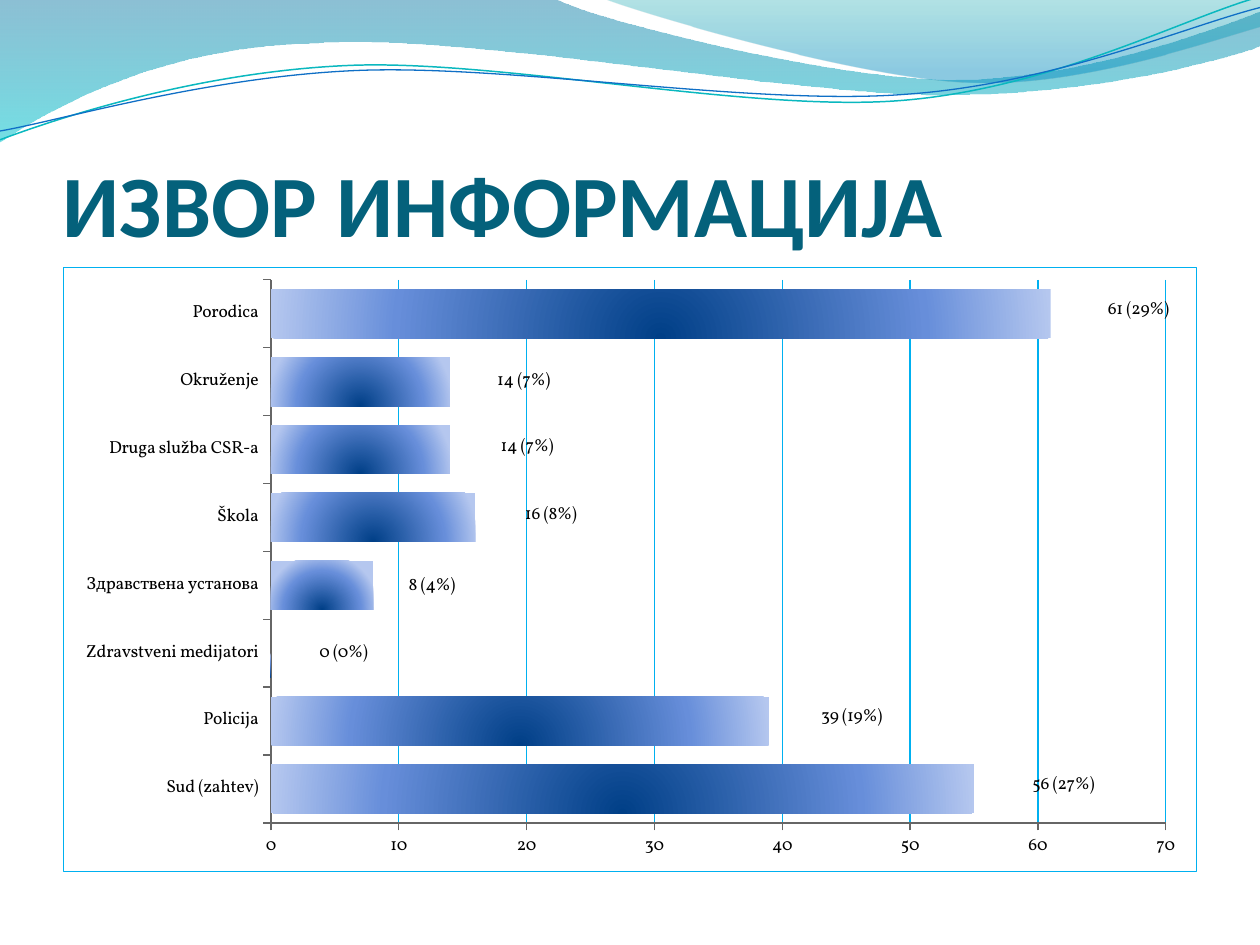
from pptx import Presentation
from pptx.chart.data import CategoryChartData
from pptx.dml.color import RGBColor
from pptx.enum.chart import XL_CHART_TYPE, XL_LABEL_POSITION, XL_TICK_MARK
from pptx.enum.text import MSO_ANCHOR
from pptx.oxml import parse_xml
from pptx.oxml.ns import nsdecls, qn
from pptx.util import Inches, Pt

SOURCES = [
    ("Sud (zahtev)", 55, "56 (27%)", (0.111, -0.005)),
    ("Policija", 39, "39 (19%)", (0.104, -0.006)),
    ("Zdravstveni medijatori", 0, "0 (0%)", (0.09, 0)),
    ("Здравствена установа", 8, "8 (4%)", (0.077, 0.002)),
    ("Škola", 16, "16 (8%)", (0.094, -0.003)),
    ("Druga služba CSR-a", 14, "14 (7%)", (0.096, -0.003)),
    ("Okruženje", 14, "14 (7%)", (0.093, 0)),
    ("Porodica", 61, "61 (29%)", (0.109, -0.005)),
]
BROAD_WAVE = [
    (0, 0), (4.4, -0.01), (4.76, 0.17, 6.64, 0.63, 7.58, 0.63),
    (8.53, 0.63, 9.58, 0.26, 10, 0.09), (10.01, 0.36),
    (9.83, 0.44, 8.7, 0.76, 7.46, 0.75), (6.22, 0.75, 3.82, 0.28, 2.57, 0.34),
    (1.29, 0.36, 0.46, 0.83, -0.01, 1.13), (0, 0),
]
RIGHT_WAVE = [
    (4.79, -0.01), (5.09, 0.11, 6.82, 0.62, 7.69, 0.65),
    (8.56, 0.69, 9.61, 0.32, 10, 0.21), (10, 0), (4.79, -0.01),
]
TEAL_STRAND = [
    (0, 1.11), (0.48, 0.93, 1.58, 0.57, 2.77, 0.52),
    (3.95, 0.47, 5.93, 0.89, 7.13, 0.8), (8.33, 0.71, 9.38, 0.15, 9.98, -0.02),
]
BLUE_STRAND = [
    (0, 1.04), (0.47, 0.96, 1.64, 0.61, 2.83, 0.56),
    (4.03, 0.51, 5.97, 0.84, 7.17, 0.75), (8.36, 0.67, 9.41, 0.21, 10, 0.06),
]


def rgb(hex_colour):
    """Turn a hex string into a colour."""
    return RGBColor.from_string(hex_colour)


def add_outline(slide, pieces, close):
    """Draw an outline whose six-number pieces are cubic curves."""
    start, *corners = [
        (Inches(piece[i]), Inches(piece[i + 1]))
        for piece in pieces for i in range(0, len(piece), 2)]
    builder = slide.shapes.build_freeform(*start)
    builder.add_line_segments(corners, close=close)
    outline = builder.convert_to_shape()
    outline.shadow.inherit = False
    segments = iter(list(outline.element.iter(qn("a:lnTo"))))
    for piece in pieces[1:]:
        segment = next(segments)
        if len(piece) == 6:
            curve = parse_xml(f'<a:cubicBezTo {nsdecls("a")}/>')
            segment.addprevious(curve)
            for control in (segment, next(segments), next(segments)):
                curve.append(control[0])
                control.getparent().remove(control)
    return outline


def add_wave(slide, pieces, stops):
    """Add a wave with a translucent downward gradient."""
    wave = add_outline(slide, pieces, True)
    wave.line.fill.background()
    wave.fill.gradient()
    wave.fill.gradient_angle = 270
    for stop, (position, colour, _) in zip(wave.fill.gradient_stops, stops):
        stop.position = position
        stop.color.rgb = rgb(colour)
    colours = wave.element.spPr.iter(qn("a:srgbClr"))
    for colour, (_, _, opacity) in zip(list(colours), stops):
        colour.append(parse_xml(f'<a:alpha {nsdecls("a")} val="{opacity * 1000}"/>'))


def add_strand(slide, pieces, colour, width):
    """Add a thin curved line."""
    strand = add_outline(slide, pieces, False)
    strand.fill.background()
    strand.line.color.rgb = rgb(colour)
    strand.line.width = Pt(width)


def add_title(slide, wording):
    """Add the slide title."""
    frame = slide.shapes.add_textbox(
        Inches(0.5), Inches(0.77), Inches(9), Inches(1.25)).text_frame
    frame.word_wrap = True
    frame.vertical_anchor = MSO_ANCHOR.BOTTOM
    frame.margin_left = frame.margin_right = frame.margin_bottom = 0
    frame.margin_top = Inches(0.05)
    run = frame.paragraphs[0].add_run()
    run.text = wording
    style_font(run.font, 50, "Calibri", "04617B")
    run.font.bold = True


def style_font(font, size, name, colour):
    """Set size, typeface and colour of a font."""
    font.size, font.name = Pt(size), name
    font.color.rgb = rgb(colour)


def manual_layout(**values):
    """Return a chart layout element holding the given settings."""
    settings = "".join(f'<c:{key} val="{value}"/>' for key, value in values.items())
    return parse_xml(
        f'<c:layout {nsdecls("c")}><c:manualLayout>{settings}</c:manualLayout></c:layout>')


def style_axis(axis):
    """Give an axis a grey line and outside ticks."""
    axis.format.line.color.rgb = rgb("666666")
    axis.major_tick_mark = XL_TICK_MARK.OUTSIDE
    axis.minor_tick_mark = XL_TICK_MARK.NONE


def frame_chart(chart):
    """Place the plot area and draw the chart border."""
    space = chart._chartSpace
    plot_area = space.find(".//" + qn("c:plotArea"))
    for layout in plot_area.findall(qn("c:layout")):
        plot_area.remove(layout)
    plot_area.insert(0, manual_layout(
        layoutTarget="inner", xMode="edge", yMode="edge",
        x=0.183, y=0.02, w=0.79, h=0.9))
    space.find(qn("c:txPr")).addprevious(parse_xml(
        f'<c:spPr {nsdecls("c", "a")}><a:noFill/><a:ln w="9525"><a:solidFill>'
        '<a:srgbClr val="00B0F0"/></a:solidFill></a:ln></c:spPr>'))


def fill_bars(series):
    """Fill the bars with a gradient glowing from the bottom centre."""
    series.format.fill.gradient()
    gradient = series._element.find(".//" + qn("a:gradFill"))
    stops = "".join(
        f'<a:gs pos="{position}"><a:srgbClr val="{colour}"/></a:gs>'
        for position, colour in ((0, "003F87"), (68000, "678EDA"), (100000, "B5C7EF")))
    gradient.getparent().replace(gradient, parse_xml(
        f'<a:gradFill {nsdecls("a")}><a:gsLst>{stops}</a:gsLst><a:path path="circle">'
        '<a:fillToRect l="50000" t="100000" r="50000"/></a:path></a:gradFill>'))


def label_bar(point, wording, shift):
    """Write a label shifted away from its bar end."""
    label = point.data_label
    run = label.text_frame.paragraphs[0].add_run()
    run.text = wording
    style_font(run.font, 10, "Vollkorn", "000000")
    label.position = XL_LABEL_POSITION.INSIDE_END
    entry = label._dLbl
    for layout in entry.findall(qn("c:layout")):
        entry.remove(layout)
    entry.insert(1, manual_layout(x=shift[0], y=shift[1]))


def hide_leader_lines(series):
    """Turn off the lines between bars and labels."""
    labels = series._element.find(qn("c:dLbls"))
    for leader in labels.findall(qn("c:showLeaderLines")):
        leader.set("val", "0")
    labels.append(parse_xml(
        f'<c:extLst {nsdecls("c")}><c:ext uri="{{CE6537A1-D6FC-4f65-9D91-7224C49458BB}}" '
        'xmlns:c15="http://schemas.microsoft.com/office/drawing/2012/chart">'
        '<c15:showLeaderLines val="0"/></c:ext></c:extLst>'))


def add_source_chart(slide):
    """Add the bar chart of information sources."""
    names, counts, labels, shifts = zip(*SOURCES)
    data = CategoryChartData(number_format="General")
    data.categories = names
    data.add_series("Series 1", counts)
    chart = slide.shapes.add_chart(
        XL_CHART_TYPE.BAR_STACKED, Inches(0.5), Inches(2.12),
        Inches(9), Inches(4.8), data).chart
    style_font(chart.font, 10, "Vollkorn", "000000")
    chart.has_legend = chart.has_title = False
    frame_chart(chart)
    style_axis(chart.category_axis)
    counts_axis = chart.value_axis
    style_axis(counts_axis)
    counts_axis.minimum_scale, counts_axis.maximum_scale = 0, 70
    counts_axis.major_unit = 10
    grid = counts_axis.major_gridlines.format.line
    grid.color.rgb, grid.width = rgb("00B0F0"), Pt(0.75)
    plot = chart.plots[0]
    plot.gap_width, plot.overlap, plot.vary_by_categories = 39, 100, False
    series = plot.series[0]
    fill_bars(series)
    for index, (wording, shift) in enumerate(zip(labels, shifts)):
        label_bar(series.points[index], wording, shift)
    hide_leader_lines(series)


def main():
    """Build and save the slide."""
    deck = Presentation()
    deck.slide_width, deck.slide_height = Inches(10), Inches(7.5)
    slide = deck.slides.add_slide(deck.slide_layouts[6])
    add_wave(slide, BROAD_WAVE, [(0, "0074A1", 45), (1, "00C6CF", 55)])
    add_wave(slide, RIGHT_WAVE, [(0, "00A1A9", 30), (0.8, "008BBF", 45)])
    add_strand(slide, TEAL_STRAND, "0AB8BF", 0.85)
    add_strand(slide, BLUE_STRAND, "0F6FC6", 0.75)
    add_title(slide, "ИЗВОР ИНФОРМАЦИЈА")
    add_source_chart(slide)
    deck.save("out.pptx")


if __name__ == "__main__":
    main()
